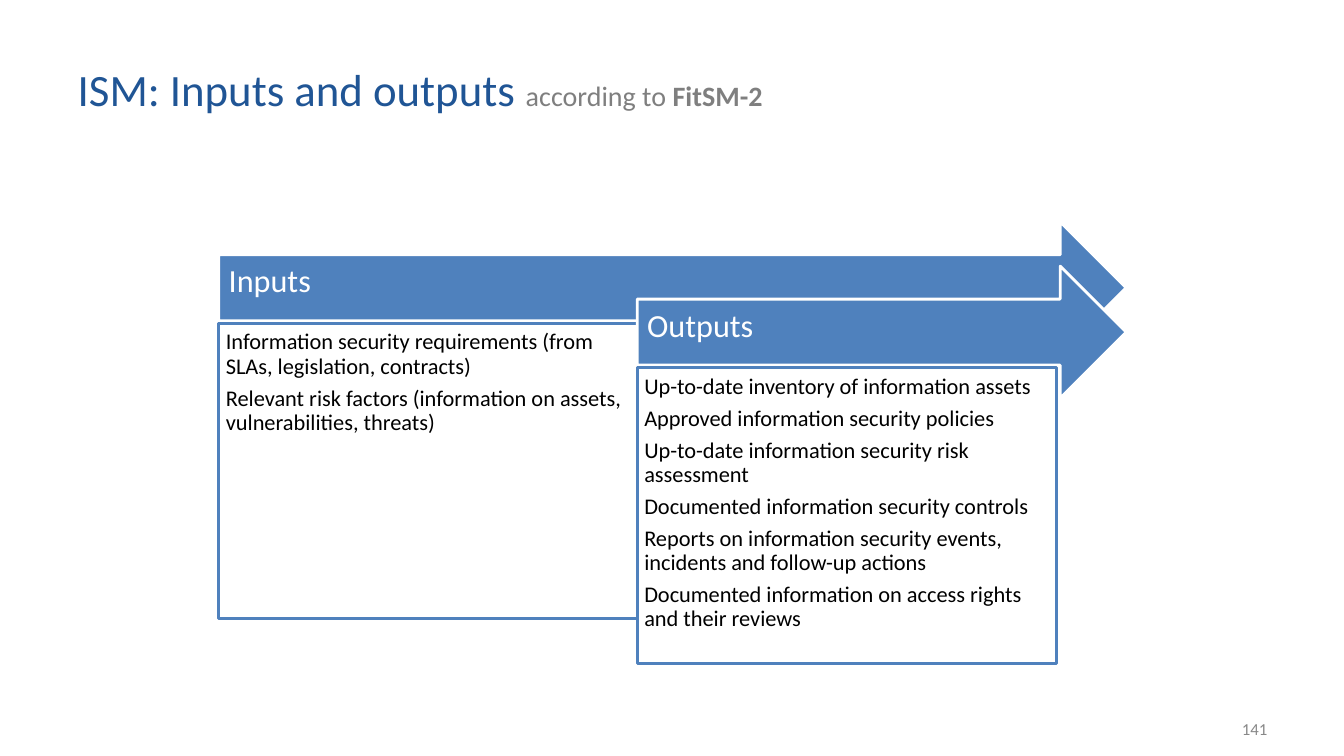
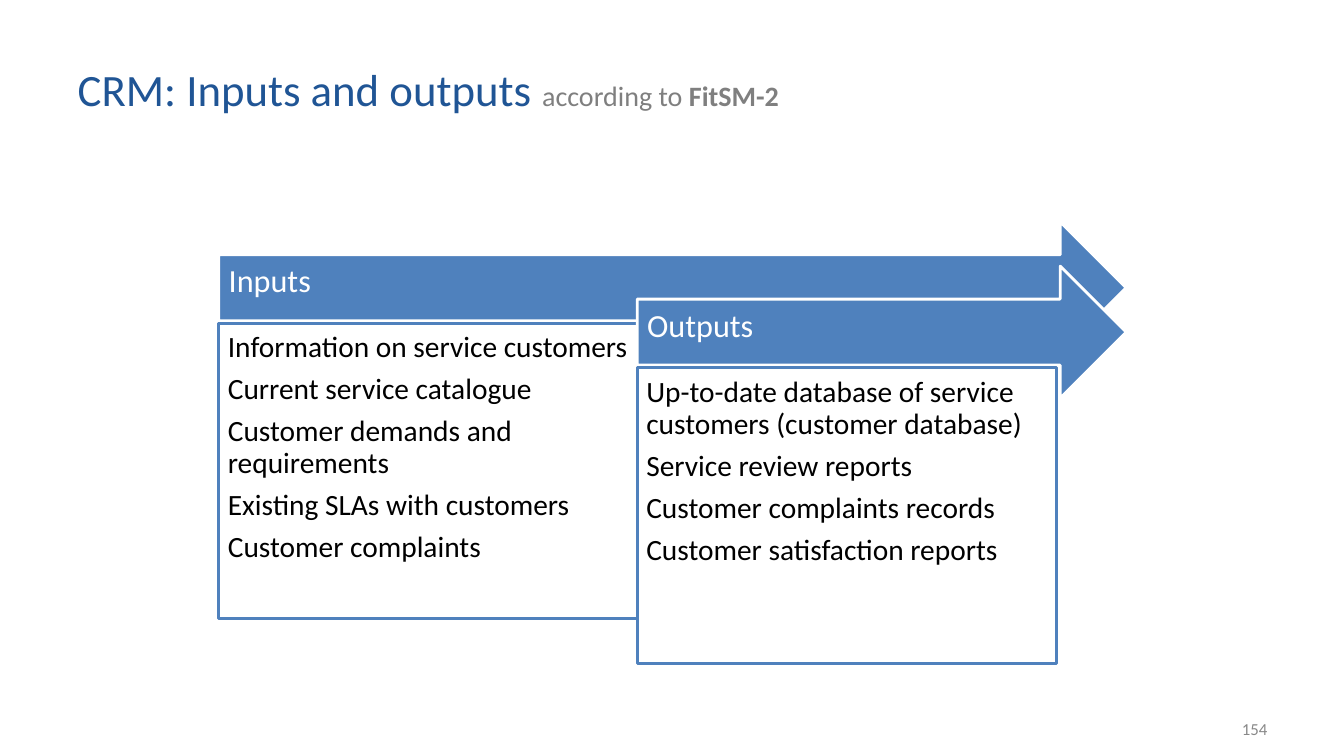
from dataclasses import dataclass

from pptx import Presentation
from pptx.dml.color import RGBColor
from pptx.enum.shapes import MSO_SHAPE
from pptx.enum.text import MSO_ANCHOR, MSO_AUTO_SIZE, PP_ALIGN
from pptx.shapes.autoshape import Shape
from pptx.slide import Slide
from pptx.text.text import TextFrame
from pptx.util import Inches, Pt

ARROW = MSO_SHAPE.RIGHT_ARROW
RECTANGLE = MSO_SHAPE.RECTANGLE
TOP, MIDDLE = MSO_ANCHOR.TOP, MSO_ANCHOR.MIDDLE
LEFT, RIGHT = PP_ALIGN.LEFT, PP_ALIGN.RIGHT
NO_AUTOFIT = MSO_AUTO_SIZE.NONE

NAVY = RGBColor(0x20, 0x55, 0x95)
BLUE = RGBColor(0x4F, 0x81, 0xBD)
GREY = RGBColor(0x7F, 0x7F, 0x7F)
PALE_GREY = RGBColor(0x88, 0x88, 0x88)
WHITE = RGBColor(0xFF, 0xFF, 0xFF)
BLACK = RGBColor(0x00, 0x00, 0x00)

FONT = "Calibri"
TITLE_ONLY = 5
SLIDE_WIDTH, SLIDE_HEIGHT = 13.33, 7.5
GRID_LEFT, GRID_TOP, GRID_RIGHT = 2.17, 2.2, 11.17
COLUMN_STEP, ROW_STEP = 4.15, 0.44
ARROW_HEIGHT = 1.31
LIST_DROP, LIST_WIDTH, LIST_HEIGHT = 1.01, 4.16, 2.93
LINE_SPACING = 0.9
TEXT_INSETS = (0.1, 0.05, 0.1, 0.05)
ARROW_INSETS = (0.1, 0.1, 0.28, 0.21)


@dataclass(frozen=True)
class ListStyle:
    size: float
    gap: float
    inset: float


@dataclass(frozen=True)
class Process:
    code: str
    number: str
    style: ListStyle
    inputs: tuple[str, ...]
    outputs: tuple[str, ...]


PROCESSES = (
    Process(
        "ISM",
        "141",
        ListStyle(16, 5.6, 0.07),
        (
            "Information security requirements (from SLAs, legislation, contracts)",
            "Relevant risk factors (information on assets, vulnerabilities, threats)",
        ),
        (
            "Up-to-date inventory of information assets",
            "Approved information security policies",
            "Up-to-date information security risk assessment",
            "Documented information security controls",
            "Reports on information security events, incidents and follow-up actions",
            "Documented information on access rights and their reviews",
        ),
    ),
    Process(
        "CRM",
        "154",
        ListStyle(21, 7.3, 0.09),
        (
            "Information on service customers",
            "Current service catalogue",
            "Customer demands and requirements",
            "Existing SLAs with customers",
            "Customer complaints",
        ),
        (
            "Up-to-date database of service customers (customer database)",
            "Service review reports",
            "Customer complaints records",
            "Customer satisfaction reports",
        ),
    ),
)


def set_frame(frame: TextFrame, insets: tuple[float, ...], anchor: MSO_ANCHOR) -> None:
    frame.word_wrap = True
    frame.auto_size = NO_AUTOFIT
    frame.vertical_anchor = anchor
    frame.margin_left, frame.margin_top, frame.margin_right, frame.margin_bottom = map(
        Inches, insets
    )


def write_lines(
    frame: TextFrame,
    lines: tuple[str, ...],
    size: float,
    colour: RGBColor,
    alignment: PP_ALIGN = LEFT,
    spacing: float = 1.0,
    gap: float = 0,
) -> None:
    for index, line in enumerate(lines):
        para = frame.add_paragraph() if index else frame.paragraphs[0]
        para.text = line
        para.alignment = alignment
        para.line_spacing = spacing
        if index:
            para.space_before = Pt(gap)
        para.font.name = FONT
        para.font.size = Pt(size)
        para.font.color.rgb = colour


def add_outlined(
    page: Slide,
    kind: MSO_SHAPE,
    bounds: tuple[float, ...],
    fill: RGBColor,
    line: RGBColor,
) -> Shape:
    shape = page.shapes.add_shape(kind, *map(Inches, bounds))
    shape.shadow.inherit = False
    shape.fill.solid()
    shape.fill.fore_color.rgb = fill
    shape.line.color.rgb = line
    shape.line.width = Pt(2)
    return shape


def add_stage(
    page: Slide, step: int, heading: str, items: tuple[str, ...], style: ListStyle
) -> None:
    left = GRID_LEFT + step * COLUMN_STEP
    top = GRID_TOP + step * ROW_STEP
    arrow = add_outlined(
        page, ARROW, (left, top, GRID_RIGHT - left, ARROW_HEIGHT), BLUE, WHITE
    )
    set_frame(arrow.text_frame, ARROW_INSETS, MIDDLE)
    write_lines(arrow.text_frame, (heading,), 23, WHITE, spacing=LINE_SPACING)
    box = add_outlined(
        page, RECTANGLE, (left, top + LIST_DROP, LIST_WIDTH, LIST_HEIGHT), WHITE, BLUE
    )
    set_frame(box.text_frame, (style.inset,) * 4, TOP)
    write_lines(
        box.text_frame, items, style.size, BLACK, spacing=LINE_SPACING, gap=style.gap
    )


def set_title(page: Slide, code: str) -> None:
    title = page.shapes.title
    title.left, title.top = Inches(0.67), Inches(0.3)
    title.width, title.height = Inches(9.91), Inches(1.15)
    set_frame(title.text_frame, TEXT_INSETS, MIDDLE)
    para = title.text_frame.paragraphs[0]
    para.alignment = LEFT
    para.font.name = FONT
    for text, size, colour, bold in (
        (f"{code}: Inputs and outputs ", 32, NAVY, False),
        ("according to ", 20, GREY, False),
        ("FitSM-2", 20, GREY, True),
    ):
        span = para.add_run()
        span.text = text
        span.font.size = Pt(size)
        span.font.color.rgb = colour
        span.font.bold = bold


def add_page_number(page: Slide, number: str) -> None:
    box = page.shapes.add_textbox(*map(Inches, (9.56, 7.03, 3.11, 0.4)))
    set_frame(box.text_frame, TEXT_INSETS, MIDDLE)
    write_lines(box.text_frame, (number,), 12, PALE_GREY, RIGHT)


def main() -> None:
    deck = Presentation()
    deck.slide_width = Inches(SLIDE_WIDTH)
    deck.slide_height = Inches(SLIDE_HEIGHT)
    for process in PROCESSES:
        page = deck.slides.add_slide(deck.slide_layouts[TITLE_ONLY])
        set_title(page, process.code)
        stages = (("Inputs", process.inputs), ("Outputs", process.outputs))
        for step, (heading, items) in enumerate(stages):
            add_stage(page, step, heading, items, process.style)
        add_page_number(page, process.number)
    deck.save("out.pptx")


if __name__ == "__main__":
    main()
